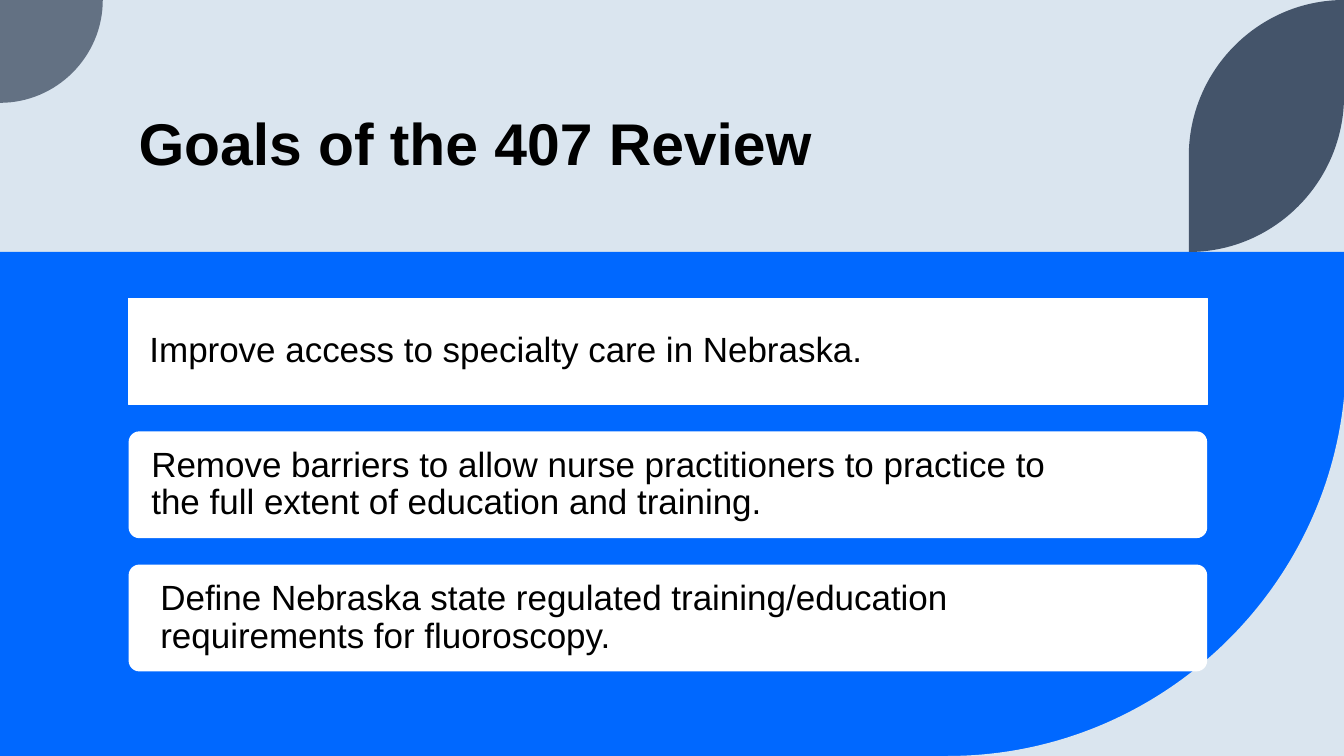
"""Build the slide on the goals of the 407 review."""
from dataclasses import dataclass

from lxml import etree
from pptx import Presentation
from pptx import util as u
from pptx.dml.color import RGBColor
from pptx.enum import shapes, text
from pptx.oxml.ns import qn

W, H = u.Inches(13.33), u.Inches(7.5)
COL, ROW = W / 100, H / 100
PALE, BLUE, GREY, SLATE = "DAE5EF", "0068FF", "637183", "44546A"
WHITE, BLACK = "FFFFFF", "000000"
LEFT, WIDTH = 9.57, 80.25
EDGE = 100.15
BAND_TOP = 33.33
CARD_TOP, CARD_STEP, CARD_HEIGHT = 39.44, 17.62, 14.13
TEXT_WIDTH, TEXT_INSET = 70.97, 0.83
CIRCLE = 0.55
MSO = shapes.MSO_SHAPE


@dataclass
class Vertex:
    x: float
    y: float
    leave: str = "straight"


@dataclass
class Outline:
    vertices: list[Vertex]
    color: str


@dataclass
class Card:
    wording: str
    text_left: float


def rgb(color: str) -> RGBColor:
    return RGBColor.from_string(color)


def cols(n: float) -> int:
    return round(n * COL)


def rows(n: float) -> int:
    return round(n * ROW)


def paint(sp, color: str) -> None:
    sp.shadow.inherit = False
    sp.fill.solid()
    sp.fill.fore_color.rgb = rgb(color)
    sp.line.fill.background()


def add_block(s, kind, x: float, y: float, w: float, h: float, color: str):
    sp = s.shapes.add_shape(kind, cols(x), rows(y), cols(w), rows(h))
    paint(sp, color)
    return sp


def bend(segment, start: tuple[int, int], end: tuple[int, int], leave: str) -> None:
    """Turn a straight segment into a quarter ellipse that leaves level or upright."""
    corner = (end[0], start[1]) if leave == "level" else (start[0], end[1])
    controls = [[round(a + CIRCLE * (c - a)) for a, c in zip(at, corner)]
                for at in (start, end)]
    segment.tag = qn("a:cubicBezTo")
    for pt in list(segment):
        segment.remove(pt)
    for x, y in [*controls, end]:
        etree.SubElement(segment, qn("a:pt"), x=str(x), y=str(y))


def add_outline(s, outline: Outline) -> None:
    first, *rest = [(cols(v.x), rows(v.y)) for v in outline.vertices]
    fb = s.shapes.build_freeform(*first)
    fb.add_line_segments([*rest, first], close=True)
    sp = fb.convert_to_shape()
    paint(sp, outline.color)
    pts = [(int(pt.get("x")), int(pt.get("y"))) for pt in sp.element.iter(qn("a:pt"))]
    segments = list(sp.element.iter(qn("a:lnTo")))
    for v, segment, start, end in zip(outline.vertices, segments, pts, pts[1:]):
        if v.leave != "straight":
            bend(segment, start, end, v.leave)


def write(sp, wording: str, size: int, spacing: float, bold: bool, anchor) -> None:
    tf = sp.text_frame
    tf.word_wrap = True
    tf.vertical_anchor = anchor
    p = tf.paragraphs[0]
    p.text = wording
    p.alignment = text.PP_ALIGN.LEFT
    p.line_spacing = spacing
    p.font.name, p.font.size, p.font.bold = "Arial", u.Pt(size), bold
    p.font.color.rgb = rgb(BLACK)


def write_goal(sp, wording: str, inset: float) -> None:
    tf = sp.text_frame
    tf.margin_left, tf.margin_right = cols(inset), cols(TEXT_INSET)
    tf.margin_top = tf.margin_bottom = cols(TEXT_INSET)
    write(sp, wording, 25, 0.9, False, text.MSO_ANCHOR.MIDDLE)


def add_card(s, card: Card, index: int) -> None:
    top = CARD_TOP + index * CARD_STEP
    sp = add_block(s, MSO.ROUNDED_RECTANGLE, LEFT, top, WIDTH, CARD_HEIGHT, WHITE)
    sp.adjustments[0] = 0.1
    box = s.shapes.add_textbox(cols(card.text_left), rows(top),
                               cols(TEXT_WIDTH), rows(CARD_HEIGHT))
    write_goal(box, card.wording, TEXT_INSET)


def add_first_card(s, wording: str) -> None:
    sp = add_block(s, MSO.RECTANGLE, LEFT, CARD_TOP, WIDTH, CARD_HEIGHT, WHITE)
    sp.line.color.rgb = rgb(WHITE)
    sp.line.width = u.Pt(0.75)
    write_goal(sp, wording, 1.55)


LEAF_LEFT = 88.45
OUTLINES = [
    Outline([Vertex(EDGE, 47.33, "upright"), Vertex(70.52, 100), Vertex(EDGE, 100)], PALE),
    Outline([Vertex(0, 0), Vertex(7.65, 0, "upright"), Vertex(0, 13.6)], GREY),
    Outline([Vertex(100, 0), Vertex(100, 12.67, "upright"), Vertex(LEAF_LEFT, BAND_TOP),
             Vertex(LEAF_LEFT, 20.67, "upright")], SLATE),
]
CARDS = [
    Card("Remove barriers to allow nurse practitioners to practice to the full extent "
         "of education and training.", 10.43),
    Card("Define Nebraska state regulated training/education requirements for "
         "fluoroscopy.", 11.1),
]


def main() -> None:
    prs = Presentation()
    prs.slide_width, prs.slide_height = W, H
    s = prs.slides.add_slide(prs.slide_layouts[6])
    s.background.fill.solid()
    s.background.fill.fore_color.rgb = rgb(PALE)
    add_block(s, MSO.RECTANGLE, 0, BAND_TOP, EDGE, 100 - BAND_TOP, BLUE)
    for outline in OUTLINES:
        add_outline(s, outline)
    title = s.shapes.add_textbox(cols(LEFT), rows(0.67), cols(WIDTH), rows(23.33))
    write(title, "Goals of the 407 Review", 42, 0.8, True, text.MSO_ANCHOR.BOTTOM)
    for index, card in enumerate(CARDS, start=1):
        add_card(s, card, index)
    add_first_card(s, "Improve access to specialty care in Nebraska.")
    prs.save("out.pptx")


if __name__ == "__main__":
    main()
